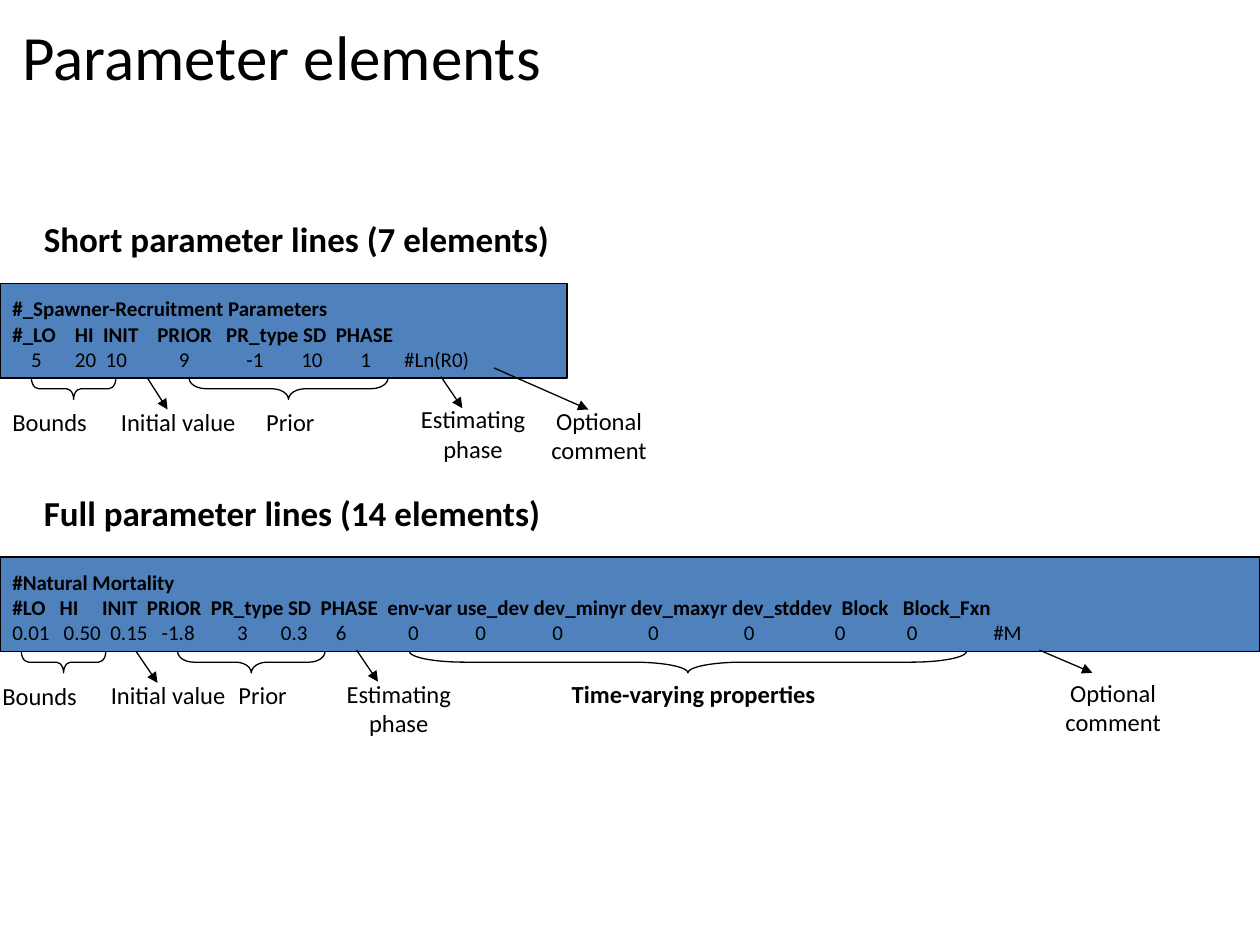
"""Build a slide that explains short and full parameter lines."""
from lxml import etree
from pptx import Presentation
from pptx.dml.color import RGBColor
from pptx.enum.shapes import MSO_CONNECTOR, MSO_SHAPE
from pptx.enum.text import MSO_ANCHOR, PP_ALIGN
from pptx.oxml.ns import qn
from pptx.util import Inches, Pt

RECT, BRACE = MSO_SHAPE.RECTANGLE, MSO_SHAPE.LEFT_BRACE
LINE = MSO_CONNECTOR.STRAIGHT
LEFT, CENTER = PP_ALIGN.LEFT, PP_ALIGN.CENTER
TOP, MIDDLE = MSO_ANCHOR.TOP, MSO_ANCHOR.MIDDLE
WIDE, HIGH = 10, 7.5
BLACK, BLUE = "000000", "4F81BD"
BAR, DEEP, NOTE = 0.75, 0.17, 1.17

GROUPS = [
    {
        "head": "Short parameter lines (7 elements)", "top": 2.25, "wide": 4.5,
        "code": ["#_Spawner-Recruitment Parameters",
                 "#_LO    HI  INIT    PRIOR   PR_type SD  PHASE",
                 "    5       20  10           9            -1        10        1"
                 "       #Ln(R0)"],
        "braces": [(0.25, 0.67, 0.333), (1.5, 1.58, 0.792)],
        "arrows": [(1.17, 0, 1.33, 0.25), (3.5, -0.01, 3.67, 0.24),
                   (3.92, -0.08, 4.67, 0.25)],
        "notes": [("Bounds", 0, 0.18, NOTE, LEFT, False),
                  ("Initial value", 0.83, 0.18, NOTE, CENTER, False),
                  ("Prior", 1.72, 0.18, NOTE, CENTER, False),
                  ("Estimating phase", 3.17, 0.16, NOTE, CENTER, False),
                  ("Optional comment", 4.17, 0.17, NOTE, CENTER, False)],
    },
    {
        "head": "Full parameter lines (14 elements)", "top": 4.42, "wide": WIDE,
        "code": ["#Natural Mortality",
                 "#LO   HI     INIT  PRIOR  PR_type SD  PHASE  env-var use_dev "
                 "dev_minyr dev_maxyr dev_stddev  Block   Block_Fxn",
                 "0.01   0.50  0.15   -1.8         3       0.3      6"
                 "             0            0              0                  0"
                 "                  0                 0             0"
                 "                #M"],
        "braces": [(0.17, 0.67, 0.333), (1.41, 1.17, 0.739), (3.25, 4.42, 2.565)],
        "arrows": [(1.08, 0, 1.25, 0.25), (2.83, -0.01, 3, 0.24),
                   (8.25, -0.01, 8.67, 0.17)],
        "notes": [("Bounds", -0.08, 0.19, NOTE, LEFT, False),
                  ("Initial value", 0.75, 0.18, NOTE, CENTER, False),
                  ("Prior", 1.5, 0.18, NOTE, CENTER, False),
                  ("Estimating phase", 2.58, 0.17, NOTE, CENTER, False),
                  ("Time-varying properties", 3.83, 0.17, 3.35, CENTER, True),
                  ("Optional comment", 8.25, 0.16, NOTE, CENTER, False)],
    },
]

deck = Presentation()
deck.slide_width, deck.slide_height = Inches(WIDE), Inches(HIGH)
slide = deck.slides.add_slide(deck.slide_layouts[6])


def paint(part, tint):
    part.solid()
    part.fore_color.rgb = RGBColor.from_string(tint)


def write(lines, x, y, w, h, size=14, bold=(False,), align=LEFT, anchor=TOP):
    frame = slide.shapes.add_textbox(*map(Inches, (x, y, w, h))).text_frame
    frame.word_wrap, frame.vertical_anchor = True, anchor
    for i, (line, heavy) in enumerate(zip(lines, bold)):
        para = frame.add_paragraph() if i else frame.paragraphs[0]
        para.alignment = align
        run = para.add_run()
        run.text = line
        run.font.name, run.font.size, run.font.bold = "Calibri", Pt(size), heavy
        paint(run.font.fill, BLACK)


def shape(kind, x, y, w, h):
    item = slide.shapes.add_shape(kind, *map(Inches, (x, y, w, h)))
    item.shadow.inherit = False
    paint(item.line.fill, BLACK)
    item.line.width = Pt(0.75)
    return item


def brace(x, y, span, curve):
    mid = x + span / 2
    item = shape(BRACE, mid - DEEP / 2, y + (DEEP - span) / 2, DEEP, span)
    item.rotation = 270
    item.adjustments[0] = curve
    item.fill.background()


def arrow(*ends):
    item = slide.shapes.add_connector(LINE, *map(Inches, ends))
    paint(item.line.fill, BLACK)
    item.line.width = Pt(0.75)
    etree.SubElement(item.line._get_or_add_ln(), qn("a:tailEnd"), type="triangle")
    etree.SubElement(item._element.spPr, qn("a:effectLst"))


write(["Parameter elements"], 0.08, 0, 9.75, 0.88, size=36, anchor=MIDDLE)
for group in GROUPS:
    top, base = group["top"], group["top"] + BAR
    paint(shape(RECT, 0, top, group["wide"], BAR).fill, BLUE)
    write([group["head"]], 0.25, top - 0.57, 5.5, 0.43, size=20, bold=[True])
    write(group["code"], 0, top + 0.05, WIDE, 0.7, size=12, bold=[True, True, False])
    for x, span, curve in group["braces"]:
        brace(x, base, span, curve)
    for x, y, far, low in group["arrows"]:
        arrow(x, base + y, far, base + low)
    for text, x, drop, w, align, heavy in group["notes"]:
        write([text], x, base + drop, w, 0.57 if w == NOTE else 0.33,
              bold=[heavy], align=align)

deck.save("out.pptx")
